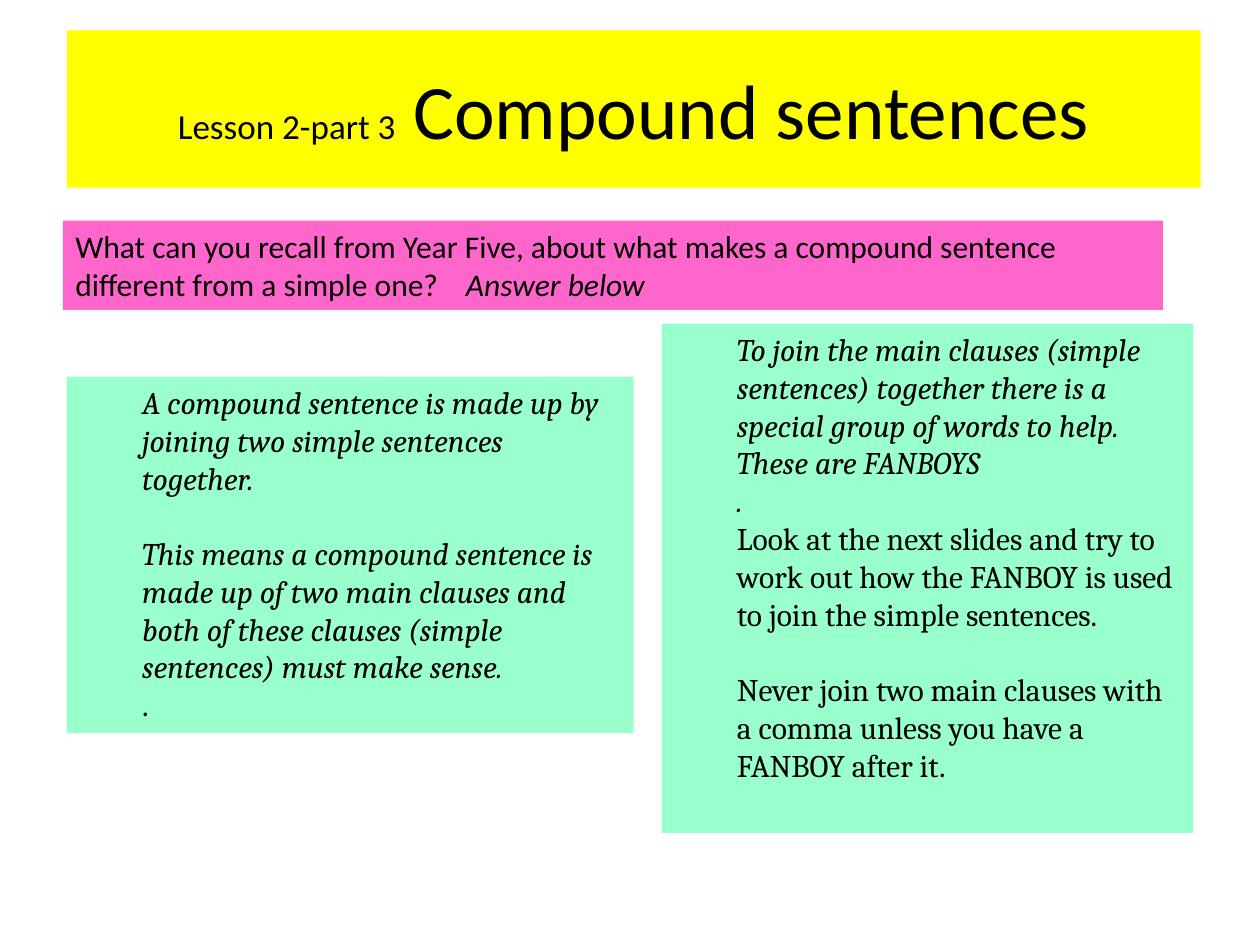
from dataclasses import dataclass

from pptx import Presentation
from pptx.dml.color import RGBColor
from pptx.enum.text import MSO_ANCHOR, MSO_AUTO_SIZE, PP_ALIGN
from pptx.oxml import parse_xml
from pptx.oxml.ns import nsdecls
from pptx.util import Inches, Pt


@dataclass(frozen=True)
class Theme:
    ink: str = "000000"
    title_fill: str = "FFFF00"
    question_fill: str = "FF66CC"
    panel_fill: str = "99FFCC"
    title_size: int = 44
    lesson_size: int = 20
    body_size: int = 18
    sans: str = "Calibri"
    serif: str = "Cambria"
    line_gap: float = 21.5  # one blank line of body text, in points


THEME = Theme()

# Each paragraph: text, italic, gap above
MEANING = [
    ("A compound sentence is made up by joining two simple sentences together.", True, False),
    ("This means a compound sentence is made up of two main clauses and both of "
     "these clauses (simple sentences) must make sense.", True, True),
    (".", False, False),
]
JOINING = [
    ("To join the main clauses (simple sentences) together there is a special group "
     "of words to help. These are FANBOYS", True, False),
    (".", True, False),
    ("Look at the next slides and try to work out how the FANBOY is used to join "
     "the simple sentences.", False, False),
    ("Never join two main clauses with a comma unless you have a FANBOY after it.",
     False, True),
]


def place(shape, box, fill):
    """Position a filled text shape and return its text frame."""
    for name, value in zip(("left", "top", "width", "height"), box):
        setattr(shape, name, Inches(value))
    shape.fill.solid()
    shape.fill.fore_color.rgb = RGBColor.from_string(fill)
    tf = shape.text_frame
    tf.word_wrap = True
    tf.auto_size = MSO_AUTO_SIZE.NONE
    return tf


def add_run(p, text, size=THEME.body_size, font=THEME.sans, italic=False):
    r = p.add_run()
    r.text = text
    for name, value in {"size": Pt(size), "name": font, "italic": italic}.items():
        setattr(r.font, name, value)
    r.font.color.rgb = RGBColor.from_string(THEME.ink)


def add_title(s, box):
    tf = place(s.shapes.title, box, THEME.title_fill)
    tf.vertical_anchor = MSO_ANCHOR.MIDDLE
    p = tf.paragraphs[0]
    p.alignment = PP_ALIGN.CENTER
    add_run(p, "Lesson 2-part 3", THEME.lesson_size)
    add_run(p, " Compound sentences", THEME.title_size)


def add_box(s, box, fill):
    return place(s.shapes.add_textbox(0, 0, 0, 0), box, fill)


def add_question(s, box):
    p = add_box(s, box, THEME.question_fill).paragraphs[0]
    # Tab stop sets the prompt apart from the question
    p._p.get_or_add_pPr().append(parse_xml(
        f'<a:tabLst {nsdecls("a")}><a:tab pos="{Inches(3.1)}" algn="l"/></a:tabLst>'))
    add_run(p, "What can you recall from Year Five, about what makes a compound "
               "sentence different from a simple one?\t")
    add_run(p, "Answer below", italic=True)


def add_panel(s, box, paragraphs):
    tf = add_box(s, box, THEME.panel_fill)
    for i, (text, italic, gap) in enumerate(paragraphs):
        p = tf.add_paragraph() if i else tf.paragraphs[0]
        p._p.get_or_add_pPr().set("marL", str(Inches(0.5)))
        if gap:
            p.space_before = Pt(THEME.line_gap)
        add_run(p, text, font=THEME.serif, italic=italic)


def main():
    prs = Presentation()
    prs.slide_width, prs.slide_height = Inches(10), Inches(7.5)
    s = prs.slides.add_slide(prs.slide_layouts[5])

    # Heading and question
    add_title(s, (0.53, 0.24, 9, 1.25))
    add_question(s, (0.5, 1.75, 8.73, 0.71))

    # Answer panels
    add_panel(s, (0.53, 2.99, 4.5, 2.83), MEANING)
    add_panel(s, (5.25, 2.57, 4.22, 4.04), JOINING)

    prs.save("out.pptx")


if __name__ == "__main__":
    main()
